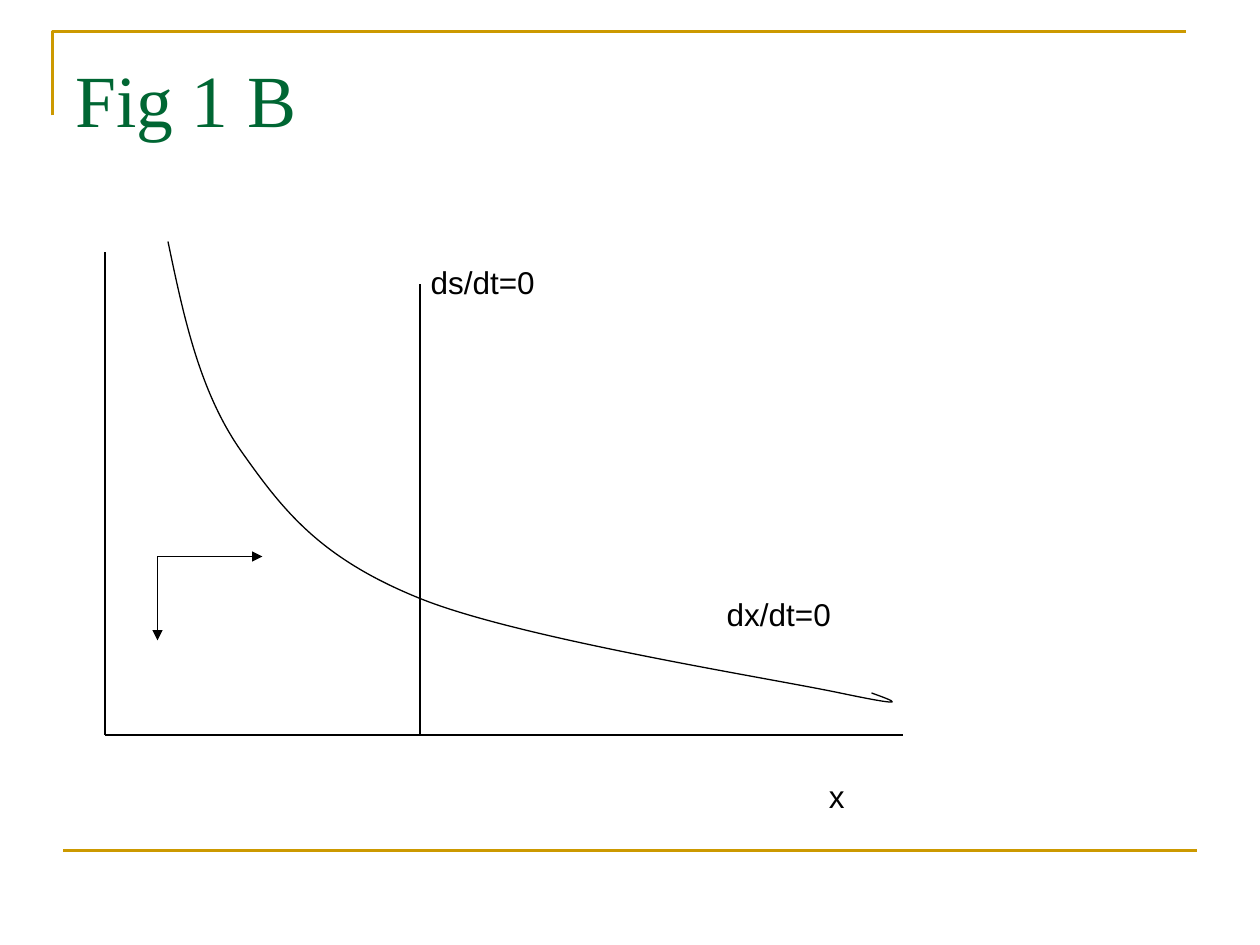
from dataclasses import dataclass
from typing import NamedTuple

from pptx import Presentation
from pptx.dml.color import RGBColor
from pptx.enum import shapes, text
from pptx.oxml import ns, xmlchemy
from pptx.util import Pt


@dataclass(frozen=True)
class Theme:
    gold: str = "CC9900"
    green: str = "006633"
    black: str = "000000"
    serif: str = "Times New Roman"
    sans: str = "Arial"
    head: float = 42
    body: float = 18
    thick: float = 1.5
    thin: float = 0.75


class Line(NamedTuple):
    x1: float
    y1: float
    x2: float
    y2: float
    arrow: bool = False
    color: str = Theme.black
    width: float = Theme.thin


class Label(NamedTuple):
    words: str
    x: float
    y: float
    w: float


LEFT, BASE, MID = 60, 420, 240
TURN = (90, 318)

LINES = [
    Line(36, 486, 684, 486, color=Theme.gold, width=Theme.thick),
    Line(LEFT, 144, LEFT, BASE),
    Line(LEFT, BASE, 516, BASE),
    Line(MID, BASE, MID, 162),
    Line(*TURN, 150, 318, arrow=True),
    Line(*TURN, 90, 366, arrow=True),
]
LABELS = [
    Label("x", 466.5, 440.6, 24),
    Label("ds/dt=0", 239, 146.9, 74),
    Label("dx/dt=0", 408.2, 336.2, 74),
]
FRAME = [(30, 66), (30, 18), (678, 18)]
CURVE = [
    (96, 138),
    (105, 181), (114, 224), (138, 258),
    (162, 292), (183, 319), (240, 342),
    (297, 365), (437, 387), (480, 396),
    (523, 405), (510.5, 400.5), (498, 396),
]


def ink(line, color: str, width: float) -> None:
    line.color.rgb = RGBColor.from_string(color)
    line.width = Pt(width)


def style(frame, font: str, size: float, color: str) -> None:
    for para in frame.paragraphs:
        for run in para.runs:
            run.font.name = font
            run.font.size = Pt(size)
            run.font.color.rgb = RGBColor.from_string(color)


def draw_line(slide, item: Line) -> None:
    ends = [Pt(v) for v in item[:4]]
    line = slide.shapes.add_connector(shapes.MSO_CONNECTOR.STRAIGHT, *ends)
    ink(line.line, item.color, item.width)
    props = line._element.spPr
    if item.arrow:
        tail = xmlchemy.OxmlElement("a:tailEnd")
        tail.set("type", "triangle")
        props.find(ns.qn("a:ln")).append(tail)
    props.append(xmlchemy.OxmlElement("a:effectLst"))


def draw_label(slide, item: Label) -> None:
    box = slide.shapes.add_textbox(Pt(item.x), Pt(item.y), Pt(item.w), Pt(29))
    frame = box.text_frame
    frame.text = item.words
    frame.word_wrap = False
    frame.auto_size = text.MSO_AUTO_SIZE.SHAPE_TO_FIT_TEXT
    style(frame, Theme.sans, Theme.body, Theme.black)


def draw_path(slide, points: list, color: str, width: float):
    start, *rest = [(Pt(x), Pt(y)) for x, y in points]
    pen = slide.shapes.build_freeform(*start)
    pen.add_line_segments(rest, close=False)
    shape = pen.convert_to_shape()
    shape.shadow.inherit = False
    shape.fill.background()
    ink(shape.line, color, width)
    return shape


def bend(shape) -> None:
    steps = list(shape._element.iter(ns.qn("a:lnTo")))
    for i in range(0, len(steps), 3):
        cubic = xmlchemy.OxmlElement("a:cubicBezTo")
        steps[i].addprevious(cubic)
        for step in steps[i:i + 3]:
            cubic.append(step[0])
            step.getparent().remove(step)


def draw_title(slide, words: str) -> None:
    title = slide.shapes.title
    title.left, title.top = Pt(36), Pt(21.6)
    title.width, title.height = Pt(648), Pt(90)
    frame = title.text_frame
    frame.text = words
    frame.vertical_anchor = text.MSO_ANCHOR.TOP
    frame.margin_top = Pt(9)
    frame.paragraphs[0].alignment = text.PP_ALIGN.LEFT
    style(frame, Theme.serif, Theme.head, Theme.green)


def main() -> None:
    deck = Presentation()
    deck.slide_width, deck.slide_height = Pt(720), Pt(540)
    slide = deck.slides.add_slide(deck.slide_layouts[5])
    draw_title(slide, "Fig 1 B")
    draw_path(slide, FRAME, Theme.gold, Theme.thick)
    for line in LINES:
        draw_line(slide, line)
    for label in LABELS:
        draw_label(slide, label)
    bend(draw_path(slide, CURVE, Theme.black, Theme.thin))
    deck.save("out.pptx")


if __name__ == "__main__":
    main()
